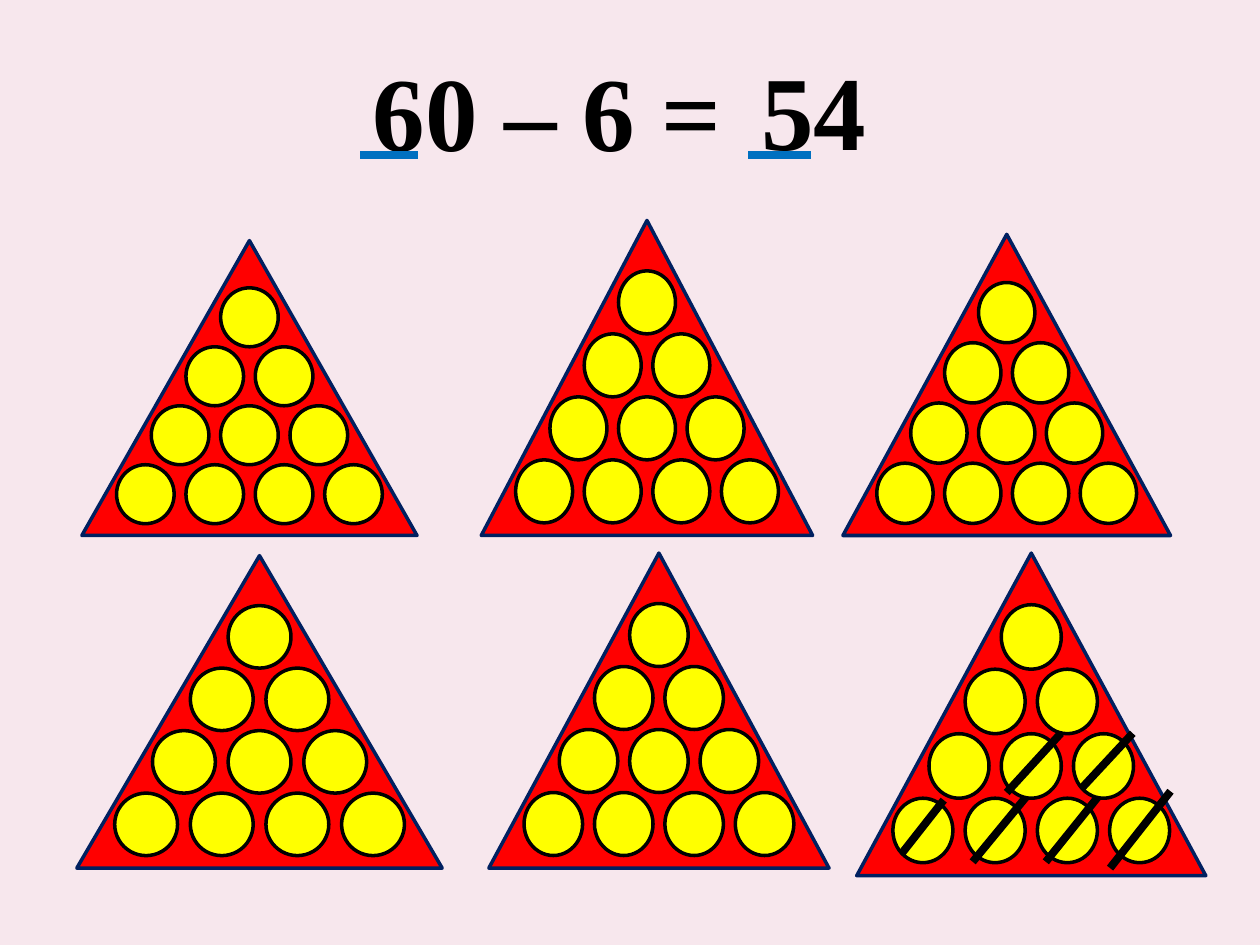
"""Build a slide that shows 60 – 6 = 54 with six triangles of ten counters."""
import dataclasses

import pptx
import pptx.dml.color
import pptx.enum.shapes
import pptx.enum.text
import pptx.oxml
import pptx.oxml.ns
import pptx.slide
import pptx.util

RGBColor = pptx.dml.color.RGBColor
SHAPE = pptx.enum.shapes.MSO_SHAPE
ALIGN = pptx.enum.text.PP_ALIGN
ANCHOR = pptx.enum.text.MSO_ANCHOR

PINK = RGBColor(0xF7, 0xE7, 0xED)
RED = RGBColor(0xFF, 0x00, 0x00)
NAVY = RGBColor(0x00, 0x20, 0x60)
GOLD = RGBColor(0xFF, 0xFF, 0x00)
BLACK = RGBColor(0x00, 0x00, 0x00)
BLUE = RGBColor(0x00, 0x70, 0xC0)

WIDE = pptx.util.Inches(10)
HIGH = pptx.util.Inches(7.5)
COLS = 100
ROWS = 75
TIERS = 4


@dataclasses.dataclass(frozen=True)
class Box:
    """An area in grid columns and rows."""

    left: float
    top: float
    width: float
    height: float


@dataclasses.dataclass(frozen=True)
class Stroke:
    """A straight line between two grid points."""

    left: float
    top: float
    right: float
    end: float
    color: RGBColor = BLACK


@dataclasses.dataclass(frozen=True)
class Label:
    """A line of large bold text."""

    text: str
    box: Box
    align: ALIGN
    anchor: ANCHOR


LABELS = [
    Label("60 – 6 =", Box(29.6, 3.1, 29.4, 11.1), ALIGN.LEFT, ANCHOR.MIDDLE),
    Label("54", Box(56.5, 3, 16.2, 11.2), ALIGN.CENTER, ANCHOR.MIDDLE),
]

RACKS = [
    Box(38.2, 17.5, 26.3, 25),
    Box(66.9, 18.6, 26, 23.9),
    Box(6.5, 19.1, 26.6, 23.4),
    Box(38.8, 43.9, 27, 25),
    Box(6.1, 44.1, 29, 24.8),
    Box(68, 43.9, 27.7, 25.6),
]

STROKES = [
    Stroke(88.1, 68.9, 92.9, 62.8),
    Stroke(83, 68.4, 87.1, 63.3),
    Stroke(77.2, 68.4, 81.4, 63.3),
    Stroke(71.6, 67.7, 74.9, 63.5),
    Stroke(85.9, 62.5, 89.9, 58.2),
    Stroke(79.9, 62.9, 84.2, 58.2),
    Stroke(28.6, 12.3, 33.2, 12.3, BLUE),
    Stroke(59.4, 12.3, 64.4, 12.3, BLUE),
]


def col(num: float) -> int:
    """Turn grid columns into a length."""
    return round(WIDE * num / COLS)


def row(num: float) -> int:
    """Turn grid rows into a length."""
    return round(HIGH * num / ROWS)


def place(box: Box) -> tuple[int, int, int, int]:
    """Turn a grid area into left, top, width and height."""
    return col(box.left), row(box.top), col(box.width), row(box.height)


def draw_form(group, kind: SHAPE, box: Box, fill: RGBColor, line: RGBColor) -> None:
    """Add one outlined shape to a group."""
    form = group.shapes.add_shape(kind, *place(box))
    form.shadow.inherit = False
    form.fill.solid()
    form.fill.fore_color.rgb = fill
    form.line.color.rgb = line
    form.line.width = pptx.util.Pt(2)


def draw_rack(slide: pptx.slide.Slide, rack: Box) -> None:
    """Add a triangle with tiers of one to four counters."""
    group = slide.shapes.add_group_shape()
    draw_form(group, SHAPE.ISOSCELES_TRIANGLE, rack, RED, NAVY)
    wide, high = rack.width * 0.172, rack.height * 0.2
    step = rack.width * 0.207
    mid = rack.left + rack.width / 2
    for tier in range(TIERS):
        top = rack.top + rack.height * 0.16 + tier * high
        for spot in range(tier + 1):
            left = mid + (spot - tier / 2) * step - wide / 2
            draw_form(group, SHAPE.OVAL, Box(left, top, wide, high), GOLD, BLACK)


def draw_label(slide: pptx.slide.Slide, label: Label) -> None:
    """Add one large text."""
    frame = slide.shapes.add_textbox(*place(label.box)).text_frame
    frame.word_wrap = True
    frame.margin_left = frame.margin_right = 0
    frame.vertical_anchor = label.anchor
    para = frame.paragraphs[0]
    para.text = label.text
    para.alignment = label.align
    para.font.name = "Times New Roman"
    para.font.size = pptx.util.Pt(60)
    para.font.bold = True
    para.font.color.rgb = BLACK


def draw_stroke(slide: pptx.slide.Slide, stroke: Stroke) -> None:
    """Add one thick straight line."""
    line = slide.shapes.add_connector(
        pptx.enum.shapes.MSO_CONNECTOR.STRAIGHT,
        col(stroke.left), row(stroke.top), col(stroke.right), row(stroke.end),
    )
    line.line.color.rgb = stroke.color
    line.line.width = pptx.util.Pt(4.5)
    blank = pptx.oxml.parse_xml(f"<a:effectLst {pptx.oxml.ns.nsdecls('a')}/>")
    line._element.spPr.append(blank)


def main() -> None:
    """Build and save the slide."""
    deck = pptx.Presentation()
    deck.slide_width, deck.slide_height = WIDE, HIGH
    slide = deck.slides.add_slide(deck.slide_layouts[6])
    slide.background.fill.solid()
    slide.background.fill.fore_color.rgb = PINK
    for rack in RACKS:
        draw_rack(slide, rack)
    for label in LABELS:
        draw_label(slide, label)
    for stroke in STROKES:
        draw_stroke(slide, stroke)
    deck.save("out.pptx")


if __name__ == "__main__":
    main()
